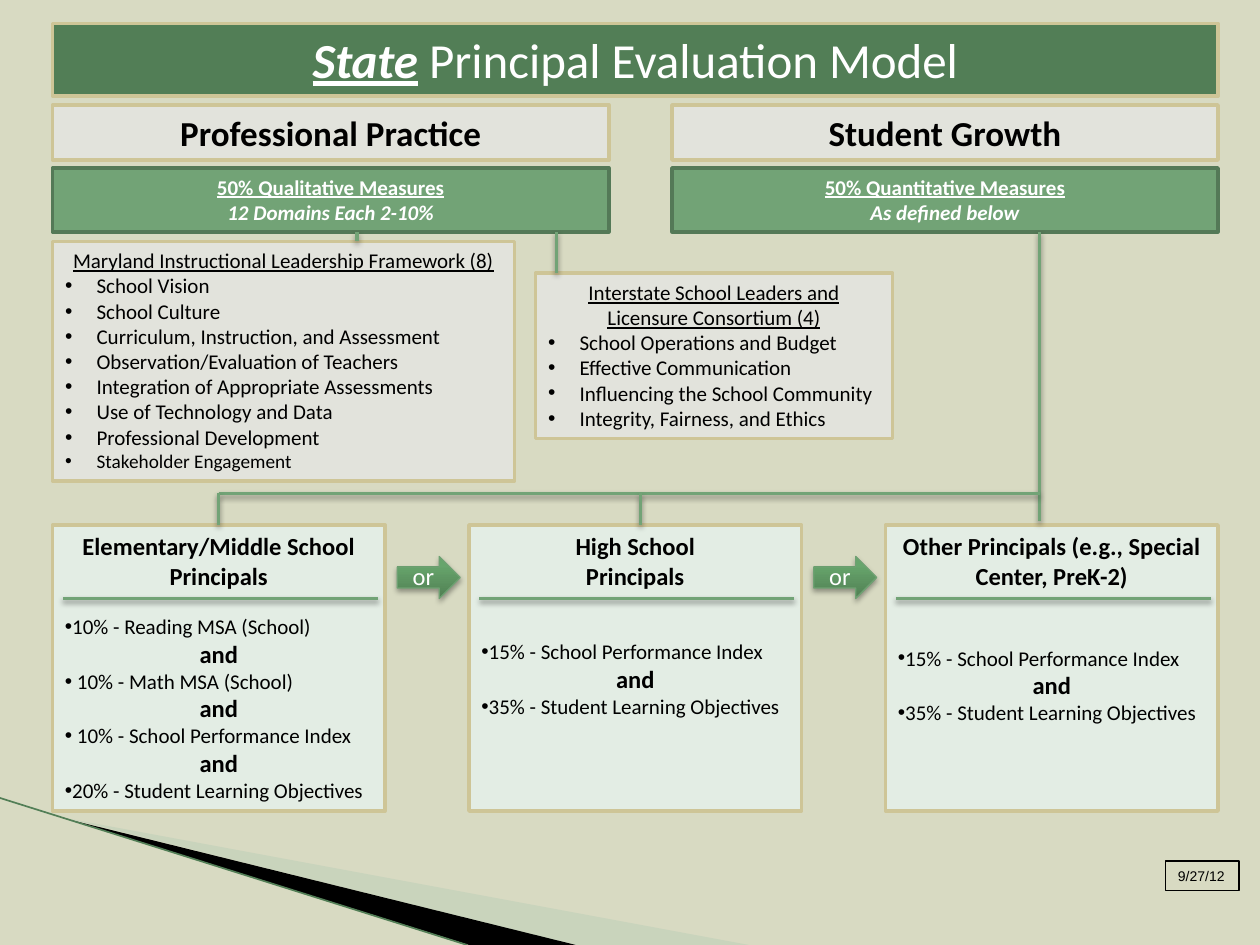
from lxml.etree import SubElement
from pptx import Presentation
from pptx.dml.color import RGBColor
from pptx.enum.shapes import MSO_CONNECTOR as Connector, MSO_SHAPE as Shape
from pptx.enum.text import MSO_ANCHOR as Anchor, MSO_AUTO_SIZE as AutoSize, PP_ALIGN as Align
from pptx.oxml.ns import qn
from pptx.util import Pt

SAND, STONE, MINT = "CEC597", "E2E3DC", "E3EDE4"
LEAF, FOREST, MOSS = "72A376", "527E56", "547957"
BLACK, WHITE = "000000", "FFFFFF"


def rgb(hex_color):
    return RGBColor.from_string(hex_color)


def paint(item, fill, outline, width=2):
    item.fill.solid()
    item.fill.fore_color.rgb = rgb(fill)
    item.line.color.rgb = rgb(outline)
    item.line.width = Pt(width)


def cast_shadow(item, alpha, distance):
    effects = SubElement(item._element.spPr, qn("a:effectLst"))
    shadow = SubElement(effects, qn("a:outerShdw"), blurRad=str(Pt(3.1)),
                        dist=str(Pt(distance)), dir="5400000", rotWithShape="0")
    color = SubElement(shadow, qn("a:srgbClr"), val=BLACK)
    SubElement(color, qn("a:alpha"), val=str(alpha * 1000))


def prepare_frame(item):
    frame = item.text_frame
    frame.word_wrap = True
    frame.auto_size = AutoSize.NONE
    frame.vertical_anchor = Anchor.TOP
    return frame


def add_box(slide, place, fill, outline):
    box = slide.shapes.add_shape(Shape.RECTANGLE, *map(Pt, place))
    box.shadow.inherit = False
    paint(box, fill, outline)
    return box


def place_placeholder(holder, place, fill):
    holder.left, holder.top, holder.width, holder.height = map(Pt, place)
    paint(holder, fill, SAND)
    return prepare_frame(holder)


def add_line(frame, text, size, color=BLACK, bold=False, italic=False, underline=False,
             align=Align.CENTER, bullet=False, hang=0, before=0, font="Calibri"):
    line = frame.paragraphs[0] if not frame.text else frame.add_paragraph()
    line.add_run().text = text
    properties = line._p.get_or_add_pPr()
    properties.set("marL", str(Pt(hang)))
    properties.set("indent", str(Pt(-hang)))
    if bullet:
        SubElement(properties, qn("a:buFont"), typeface="Arial")
        SubElement(properties, qn("a:buChar"), char="•")
    else:
        SubElement(properties, qn("a:buNone"))
    line.alignment = align
    line.space_before = Pt(before)
    line.font.name, line.font.size = font, Pt(size)
    line.font.color.rgb = rgb(color)
    line.font.bold, line.font.italic, line.font.underline = bold, italic, underline
    return line


def add_bullet(frame, text, size=12, **options):
    add_line(frame, text, size, align=Align.LEFT, bullet=True, **options)


def add_framework(holder, place, heading, domains, heading_hang=0):
    frame = place_placeholder(holder, place, STONE)
    add_line(frame, heading, 12, underline=True, hang=heading_hang)
    for domain, size in domains:
        add_bullet(frame, domain, size, hang=18)


def add_measure(slide, place, share, detail):
    frame = prepare_frame(add_box(slide, place, LEAF, MOSS))
    add_line(frame, share, 12, WHITE, bold=True, underline=True)
    add_line(frame, detail, 12, WHITE, bold=True, italic=True)


def add_principals(slide, left, headings, criteria, gap):
    group = add_box(slide, (left, 300, 190, 163.5), MINT, SAND)
    frame = prepare_frame(group)
    for heading in headings:
        add_line(frame, heading, 14, bold=True)
    for index, criterion in enumerate(criteria):
        if index:
            add_line(frame, "and", 14, bold=True)
        add_bullet(frame, criterion, before=0 if index else gap)
    return group


def add_link(slide, x1, y1, x2, y2):
    link = slide.shapes.add_connector(Connector.STRAIGHT, *map(Pt, (x1, y1, x2, y2)))
    link.line.color.rgb = rgb(LEAF)
    link.line.width = Pt(2)
    cast_shadow(link, 38, 1.6)
    return link


def add_or_arrow(slide, left):
    arrow = slide.shapes.add_shape(Shape.RIGHT_ARROW, *map(Pt, (left, 318, 36, 24)))
    arrow.fill.gradient()
    arrow.fill.gradient_angle = 90
    stops = arrow.fill.gradient_stops
    for stop, position, color in zip(stops, (0, 0.8), ("507F53", "67A56C")):
        stop.position = position
        stop.color.rgb = rgb(color)
    arrow.line.color.rgb = rgb("6EA172")
    arrow.line.width = Pt(0.75)
    cast_shadow(arrow, 35, 1.8)
    frame = prepare_frame(arrow)
    frame.vertical_anchor = Anchor.MIDDLE
    frame.margin_top, frame.margin_bottom = 0, Pt(1.5)
    add_line(frame, "or", 14, WHITE)


def add_ray(slide, points, fill):
    builder = slide.shapes.build_freeform(*points[0], scale=Pt(1))
    builder.add_line_segments(points[1:], close=True)
    ray = builder.convert_to_shape()
    ray.shadow.inherit = False
    ray.fill.solid()
    ray.fill.fore_color.rgb = rgb(fill)
    ray.line.fill.background()
    return ray


def add_background(slide):
    slide.background.fill.solid()
    slide.background.fill.fore_color.rgb = rgb("D8DAC2")
    pale_ray = add_ray(slide, [(39.5, 468.5), (428, 540), (328, 540)], "B3CBB5")
    color = pale_ray._element.spPr.find(qn("a:solidFill")).find(qn("a:srgbClr"))
    SubElement(color, qn("a:alpha"), val="40000")
    add_ray(slide, [(38, 467.5), (329, 540), (268, 540)], BLACK)
    edge = slide.shapes.add_connector(Connector.STRAIGHT, *map(Pt, (0, 456, 267, 540)))
    edge.line.color.rgb = rgb(FOREST)
    edge.line.width = Pt(0.95)
    SubElement(edge._element.spPr, qn("a:effectLst"))


def add_title(slide):
    frame = place_placeholder(slide.shapes.title, (30, 13.5, 666, 41.5), FOREST)
    title = add_line(frame, "State", 28, WHITE)
    state = title.runs[0].font
    state.bold = state.italic = state.underline = True
    title.add_run().text = " Principal Evaluation Model"


def add_date(slide):
    date = slide.shapes.add_textbox(*map(Pt, (666, 492, 42, 17)))
    date.line.color.rgb = rgb(BLACK)
    date.line.width = Pt(0.75)
    frame = prepare_frame(date)
    frame.word_wrap = False
    add_line(frame, "9/27/12", 8, align=Align.LEFT, font="Arial")


def main():
    deck = Presentation()
    deck.slide_width, deck.slide_height = Pt(720), Pt(540)
    slide = deck.slides.add_slide(deck.slide_layouts[4])
    holders = slide.placeholders
    add_background(slide)
    add_title(slide)

    for index, left, width, heading in ((1, 30, 318, "Professional Practice"),
                                        (3, 384, 312, "Student Growth")):
        frame = place_placeholder(holders[index], (left, 60, width, 31.5), STONE)
        add_line(frame, heading, 20, bold=True)
    add_measure(slide, (30, 96, 318, 36.5), "50% Qualitative Measures", "12 Domains Each 2-10%")
    add_measure(slide, (384, 96, 312, 36.5), "50% Quantitative Measures", "As defined below")

    add_framework(holders[2], (30, 138, 264, 137), "Maryland Instructional Leadership Framework (8)", [
        ("School Vision", 12), ("School Culture", 12),
        ("Curriculum, Instruction, and Assessment", 12),
        ("Observation/Evaluation of Teachers", 12),
        ("Integration of Appropriate Assessments", 12),
        ("Use of Technology and Data", 12), ("Professional Development", 12),
        ("Stakeholder Engagement", 11)], heading_hang=18)
    add_framework(holders[4], (306, 156, 204, 94.5),
                  "Interstate School Leaders and Licensure Consortium (4)", [
        ("School Operations and Budget", 12), ("Effective Communication", 12),
        ("Influencing the School Community", 12), ("Integrity, Fairness, and Ethics", 12)])

    index_criteria = ["15% - School Performance Index", "35% - Student Learning Objectives"]
    groups = [
        (["Elementary/Middle School Principals"],
         ["10% - Reading MSA (School)", " 10% - Math MSA (School)",
          " 10% - School Performance Index", "20% - Student Learning Objectives"], 13.5),
        (["High School", "Principals"], index_criteria, 28),
        (["Other Principals (e.g., Special Center, PreK-2)"], index_criteria, 31.5)]
    columns = [30 + 238 * index for index in range(len(groups))]
    boxes = [add_principals(slide, left, *group) for left, group in zip(columns, groups)]

    for link in ((318, 132.5, 318, 156), (204, 132.5, 204, 138), (594, 132.5, 594, 298),
                 (125, 282, 594, 282), (366, 282, 366, 300)):
        add_link(slide, *link)
    add_link(slide, 125, 282, 125, 300).end_connect(boxes[0], 0)
    for left in columns:
        add_link(slide, left + 6, 342, left + 186, 342)
    for left in columns[:-1]:
        add_or_arrow(slide, left + 197)
    add_date(slide)
    deck.save("out.pptx")


if __name__ == "__main__":
    main()
